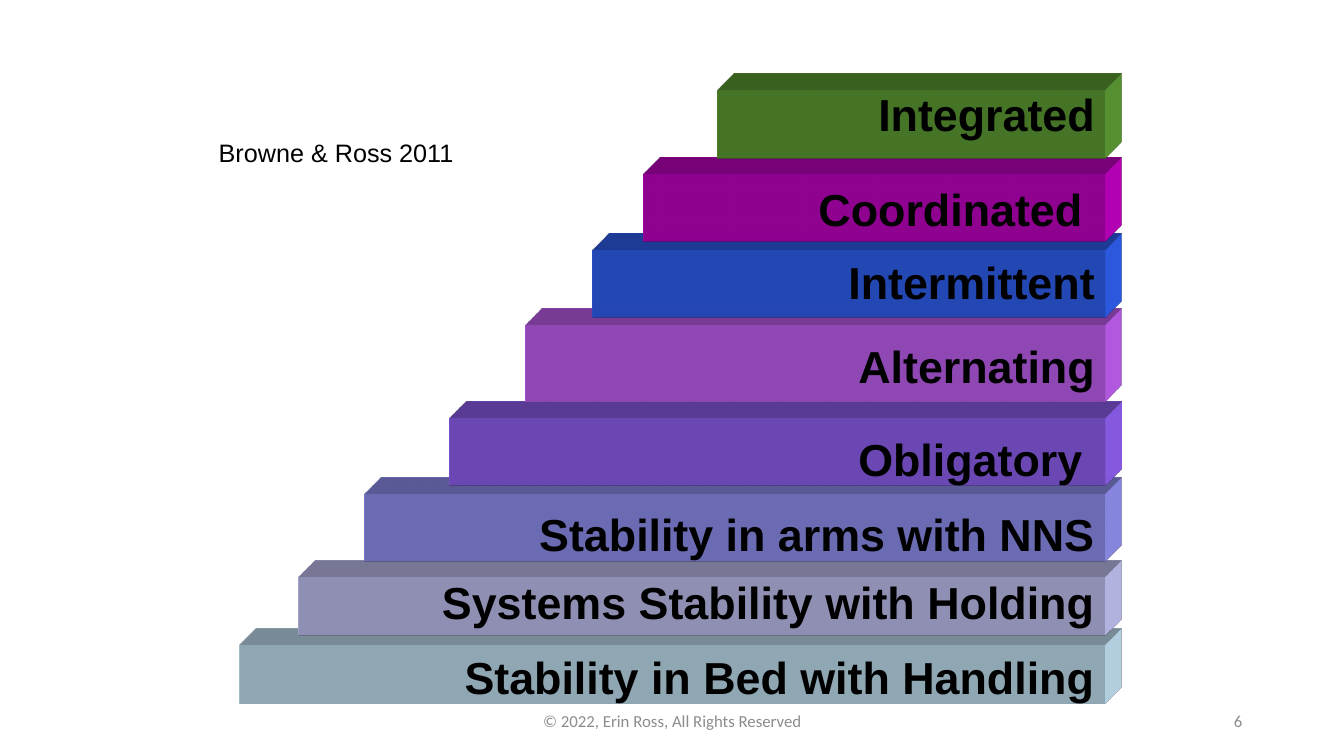
from lxml import etree
from pptx import Presentation
from pptx.dml.color import RGBColor
from pptx.enum.shapes import MSO_SHAPE
from pptx.enum.text import MSO_ANCHOR, PP_ALIGN
from pptx.util import Inches, Pt

RECTANGLE = MSO_SHAPE.RECTANGLE
TOP, MIDDLE = MSO_ANCHOR.TOP, MSO_ANCHOR.MIDDLE
LEFT, CENTER, RIGHT = PP_ALIGN.LEFT, PP_ALIGN.CENTER, PP_ALIGN.RIGHT

# Steps from the bottom up: label, bar left, bar top, bar height, label top, colour
STEPS = [
    ("Stability in Bed with Handling", 2.38, 6.40, 0.58, 6.40, "CCECFF"),
    ("Systems Stability with Holding", 2.96, 5.73, 0.58, 5.65, "CCCCFF"),
    ("Stability in arms with NNS", 3.62, 4.90, 0.67, 4.98, "9999FF"),
    ("Obligatory ", 4.46, 4.15, 0.67, 4.23, "9966FF"),
    ("Alternating", 5.21, 3.23, 0.75, 3.31, "CC66FF"),
    ("Intermittent", 5.88, 2.48, 0.67, 2.48, "3366FF"),
    ("Coordinated ", 6.38, 1.73, 0.67, 1.75, "CC00CC"),
    ("Integrated", 7.12, 0.90, 0.67, 0.81, "63A537"),
]
CITATION = "Browne & Ross 2011"
COPYRIGHT = "© 2022, Erin Ross, All Rights Reserved"
PAGE_NUMBER = "6"

STAIR_RIGHT = 10.96
LABEL_HEIGHT = 0.64
EXTRUSION_DEPTH = Inches(0.47)

THEME = {
    "label": {"font": "Arial", "size": 32, "color": "000000", "bold": True},
    "citation": {"font": "Arial", "size": 18, "color": "000000", "bold": False},
    "footer": {"font": "Calibri", "size": 12, "color": "8C8C8C", "bold": False},
}

DRAWING = "http://schemas.openxmlformats.org/drawingml/2006/main"
EXTRUSION = """<a:root xmlns:a="{ns}">
<a:scene3d>
  <a:camera prst="legacyObliqueTopRight"/>
  <a:lightRig rig="legacyFlat3" dir="b"/>
</a:scene3d>
<a:sp3d extrusionH="{depth}" prstMaterial="legacyMatte">
  <a:bevelT w="13500" h="13500" prst="angle"/>
  <a:bevelB w="13500" h="13500" prst="angle"/>
  <a:extrusionClr><a:srgbClr val="{color}"/></a:extrusionClr>
</a:sp3d>
</a:root>"""


def add_bar(slide, left, top, height, color):
    shape = slide.shapes.add_shape(
        RECTANGLE, Inches(left), Inches(top), Inches(STAIR_RIGHT - left), Inches(height))
    shape.shadow.inherit = False
    shape.fill.solid()
    shape.fill.fore_color.rgb = RGBColor.from_string(color)
    shape.line.fill.background()
    depth_parts = etree.fromstring(
        EXTRUSION.format(ns=DRAWING, depth=EXTRUSION_DEPTH, color=color))
    for part in list(depth_parts):
        shape._element.spPr.append(part)


def add_text(slide, text, box, style, alignment, anchor=TOP, wrap=True):
    shape = slide.shapes.add_textbox(*[Inches(length) for length in box])
    frame = shape.text_frame
    frame.word_wrap = wrap
    frame.vertical_anchor = anchor
    paragraph = frame.paragraphs[0]
    paragraph.alignment = alignment
    run = paragraph.add_run()
    run.text = text
    run.font.name = style["font"]
    run.font.size = Pt(style["size"])
    run.font.bold = style["bold"]
    run.font.color.rgb = RGBColor.from_string(style["color"])


def main():
    presentation = Presentation()
    presentation.slide_width = Inches(13.33)
    presentation.slide_height = Inches(7.5)
    slide = presentation.slides.add_slide(presentation.slide_layouts[6])

    # Staircase bars, lowest first so each one overlaps the step below
    for _, left, top, height, _, color in STEPS:
        add_bar(slide, left, top, height, color)

    # Step labels, flush with the right edge of the stairs
    for label, left, _, _, label_top, _ in STEPS:
        box = (left, label_top, STAIR_RIGHT - left, LABEL_HEIGHT)
        add_text(slide, label, box, THEME["label"], RIGHT)

    # Citation and footer
    add_text(slide, CITATION, (2.07, 1.31, 2.62, 0.4), THEME["citation"], LEFT, wrap=False)
    add_text(slide, COPYRIGHT, (4.42, 6.95, 4.5, 0.4), THEME["footer"], CENTER, MIDDLE)
    add_text(slide, PAGE_NUMBER, (9.42, 6.95, 3, 0.4), THEME["footer"], RIGHT, MIDDLE)

    presentation.save("out.pptx")


if __name__ == "__main__":
    main()
